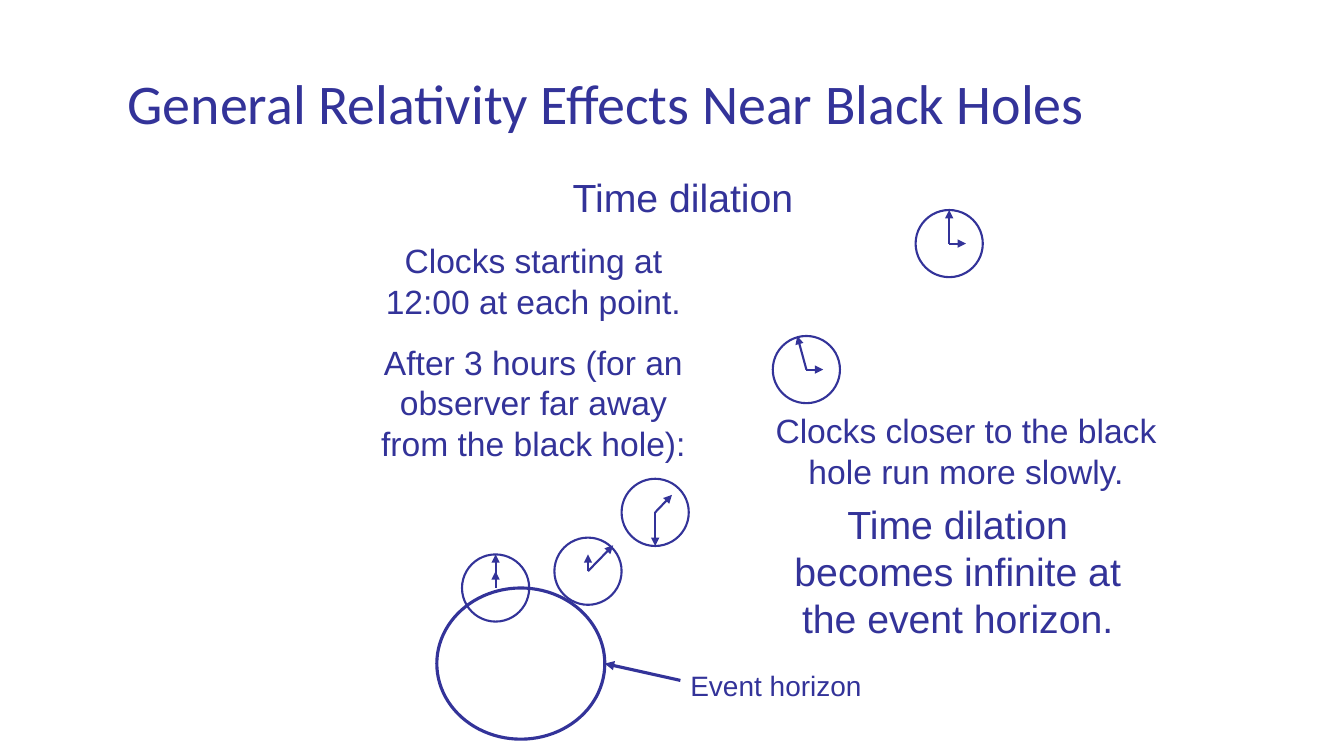
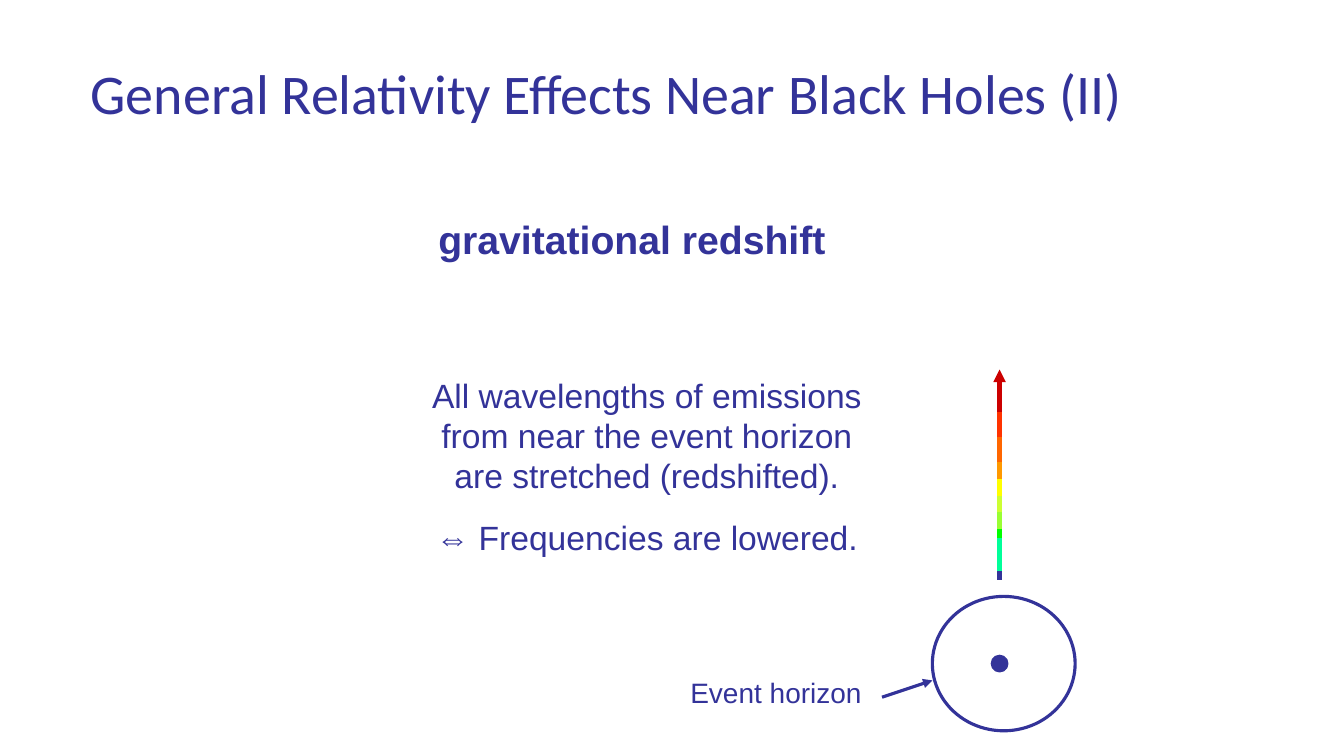
"""Build two slides on general relativity effects near black holes."""
import lxml.etree
import pptx
import pptx.dml.color
import pptx.enum.shapes
import pptx.enum.text
import pptx.oxml.ns
import pptx.util

Pt = pptx.util.Pt
RGBColor = pptx.dml.color.RGBColor
qn = pptx.oxml.ns.qn
LEFT = pptx.enum.text.PP_ALIGN.LEFT
CENTER = pptx.enum.text.PP_ALIGN.CENTER

INDIGO = RGBColor(0x33, 0x33, 0x99)
SEA_GREEN = RGBColor(0x00, 0xFF, 0x99)
GREEN = RGBColor(0x00, 0xFF, 0x00)
LIME = RGBColor(0x99, 0xFF, 0x33)
YELLOW_GREEN = RGBColor(0xCC, 0xFF, 0x33)
YELLOW = RGBColor(0xFF, 0xFF, 0x00)
AMBER = RGBColor(0xFF, 0x99, 0x00)
ORANGE = RGBColor(0xFF, 0x66, 0x00)
VERMILION = RGBColor(0xFF, 0x33, 0x00)
RED = RGBColor(0xCC, 0x00, 0x00)

TITLE = {"name": "Calibri", "size": Pt(40), "bold": False}
HEADING = {"name": "Arial", "size": Pt(28), "bold": False}
STRONG = {**HEADING, "bold": True}
BODY = {**HEADING, "size": Pt(24)}
LABEL = {**HEADING, "size": Pt(20)}

CLOCK_RADIUS = 24
CLOCK_LINE = 1.5
HORIZON_LINE = 2.25
BEAM_LINE = 3
BEAM_X = 714


def write_text(frame, lines, font, align):
    """Fill a text frame with paragraphs in one format."""
    frame.word_wrap = True
    for index, line in enumerate(lines):
        para = frame.paragraphs[0] if index == 0 else frame.add_paragraph()
        para.alignment = align
        if index:
            para.space_before = font["size"] * 5 // 8
        span = para.add_run()
        span.text = line
        for name, value in font.items():
            setattr(span.font, name, value)
        span.font.color.rgb = INDIGO


clocks = [
    ((678, 174), [(12, 0), (0, -24)]),
    ((576, 264), [(12, 0), (-6.5, -24)]),
    ((468, 366), [(12, -12.5), (0, 24)]),
    ((420, 408), [(0, -12), (18, -18.5)]),
    ((354, 420), [(0, -12), (0, -24)]),
]
clock_faces = [
    (x - CLOCK_RADIUS, y - CLOCK_RADIUS, 2 * CLOCK_RADIUS, 2 * CLOCK_RADIUS, CLOCK_LINE, False)
    for (x, y), hands in clocks
]
clock_hands = [
    (x, y, x + across, y + down, INDIGO, CLOCK_LINE, True)
    for (x, y), hands in clocks
    for across, down in hands
]

beam_stops = [414, 408, 396, 384, 378, 366, 354, 342, 330, 312, 294, 264]
beam_colours = [
    INDIGO, SEA_GREEN, SEA_GREEN, GREEN, LIME, YELLOW_GREEN,
    YELLOW, AMBER, ORANGE, VERMILION, RED,
]
beam = [
    (BEAM_X, start, BEAM_X, end, colour, BEAM_LINE, colour == RED)
    for start, end, colour in zip(beam_stops, beam_stops[1:], beam_colours)
]

pages = [
    {
        "title": ("General Relativity Effects Near Black Holes", (84, 16, 803, 120)),
        "texts": [
            (["Time dilation"], (402, 120, 198, 41), HEADING, LEFT),
            (["Event horizon"], (486, 474, 186, 32), LABEL, LEFT),
            (["Clocks starting at 12:00 at each point.",
              "After 3 hours (for an observer far away from the black hole):"],
             (258, 168, 246, 166), BODY, CENTER),
            (["Clocks closer to the black hole run more slowly."],
             (546, 289.5, 288, 65), BODY, CENTER),
            (["Time dilation becomes infinite at the event horizon."],
             (546, 354, 276, 109), HEADING, CENTER),
        ],
        "ellipses": [(312, 420, 120, 108, HORIZON_LINE, False), *clock_faces],
        "lines": [(486, 486, 432, 474, INDIGO, HORIZON_LINE, True), *clock_hands],
    },
    {
        "title": ("General Relativity Effects Near Black Holes (II)", (57.6, 12, 793, 114)),
        "texts": [
            (["gravitational redshift"], (306, 150, 324, 41), STRONG, LEFT),
            (["Event horizon"], (486, 479, 144, 32), LABEL, LEFT),
            (["All wavelengths of emissions from near the event horizon are stretched (redshifted).",
              "⇔ Frequencies are lowered."],
             (288, 264, 348, 138), BODY, CENTER),
        ],
        "ellipses": [
            (666, 426, 102, 96, HORIZON_LINE, False),
            (708, 468, 12, 12, 0.75, True),
        ],
        "lines": [(630, 498, 666, 486, INDIGO, HORIZON_LINE, True), *beam],
    },
]

deck = pptx.Presentation()
deck.slide_width = Pt(960)
deck.slide_height = Pt(540)

for content in pages:
    page = deck.slides.add_slide(deck.slide_layouts.get_by_name("Title Only"))

    wording, bounds = content["title"]
    title = page.shapes.title
    for name, value in zip(("left", "top", "width", "height"), bounds):
        setattr(title, name, Pt(value))
    title.text_frame.vertical_anchor = pptx.enum.text.MSO_ANCHOR.MIDDLE
    write_text(title.text_frame, [wording], TITLE, LEFT)
    title.text_frame.paragraphs[0].line_spacing = 0.9

    for lines, bounds, font, align in content["texts"]:
        box = page.shapes.add_textbox(*map(Pt, bounds))
        write_text(box.text_frame, lines, font, align)

    for left, top, width, height, weight, filled in content["ellipses"]:
        ellipse = page.shapes.add_shape(
            pptx.enum.shapes.MSO_SHAPE.OVAL, Pt(left), Pt(top), Pt(width), Pt(height))
        ellipse.shadow.inherit = False
        ellipse.line.color.rgb = INDIGO
        ellipse.line.width = Pt(weight)
        if filled:
            ellipse.fill.solid()
            ellipse.fill.fore_color.rgb = INDIGO
        else:
            ellipse.fill.background()

    for x1, y1, x2, y2, colour, weight, arrow in content["lines"]:
        connector = page.shapes.add_connector(
            pptx.enum.shapes.MSO_CONNECTOR.STRAIGHT, Pt(x1), Pt(y1), Pt(x2), Pt(y2))
        connector.line.color.rgb = colour
        connector.line.width = Pt(weight)
        properties = connector._element.spPr
        if arrow:
            outline = properties.find(qn("a:ln"))
            lxml.etree.SubElement(outline, qn("a:tailEnd"), type="triangle")
        lxml.etree.SubElement(properties, qn("a:effectLst"))

deck.save("out.pptx")
